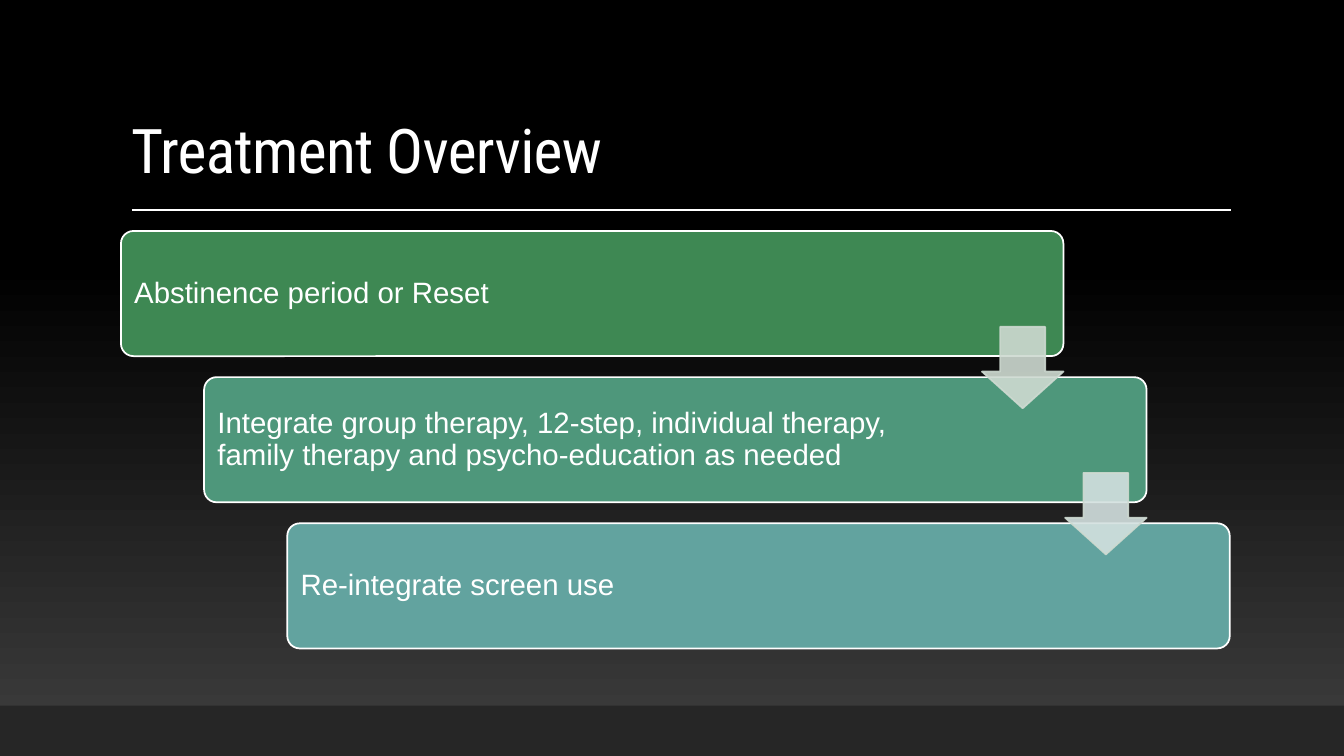
import pptx
import pptx.util
import pptx.dml.color
import pptx.enum.shapes
import pptx.enum.text
import pptx.oxml.ns
import lxml.etree

RGB = pptx.dml.color.RGBColor
KIND = pptx.enum.shapes.MSO_SHAPE
ANCHOR = pptx.enum.text.MSO_ANCHOR

WHITE = RGB(0xFF, 0xFF, 0xFF)
BLACK = RGB(0x00, 0x00, 0x00)
GREY = RGB(0x3F, 0x3F, 0x3F)
DARK = RGB(0x26, 0x26, 0x26)
GREEN = RGB(0x3E, 0x88, 0x53)
JADE = RGB(0x4E, 0x97, 0x7B)
TEAL = RGB(0x62, 0xA3, 0x9F)
PALE = RGB(0xCE, 0xDA, 0xD1)
MIST = RGB(0xD3, 0xE0, 0xDF)

STEPS = [
    ("Abstinence period or Reset", GREEN, 9.61),
    ("Integrate group therapy, 12-step, individual therapy, "
     "family therapy and psycho-education as needed", JADE, 9.17),
    ("Re-integrate screen use", TEAL, 9.17),
]
ARROWS = [PALE, MIST]
LEFT, TOP = 1.44, 2.75
RIGHT, DOWN = 0.99, 1.74


class Deck:
    """Draws styled elements on one slide laid out in 16 columns and 9 rows."""

    def __init__(self):
        self.prs = pptx.Presentation()
        self.prs.slide_width = pptx.util.Inches(13.33)
        self.prs.slide_height = pptx.util.Inches(7.5)
        self.slide = self.prs.slides.add_slide(self.prs.slide_layouts[5])
        self.shapes = self.slide.shapes

    def grid(self, col, row):
        return (int(self.prs.slide_width * col / 16),
                int(self.prs.slide_height * row / 9))

    def frame(self, col, row, wide, high):
        return self.grid(col, row) + self.grid(wide, high)

    def back(self, low, high):
        fill = self.slide.background.fill
        fill.gradient()
        fill.gradient_angle = 90
        for stop, color, place in zip(fill.gradient_stops, (low, high), (0, 0.65)):
            stop.color.rgb = color
            stop.position = place

    def letter(self, shape, text, size, face, anchor):
        body = shape.text_frame
        body.word_wrap = True
        body.auto_size = pptx.enum.text.MSO_AUTO_SIZE.NONE
        body.vertical_anchor = anchor
        para = body.paragraphs[0]
        para.text = text
        para.alignment = pptx.enum.text.PP_ALIGN.LEFT
        para.line_spacing = 0.9
        para.font.size = pptx.util.Pt(size)
        para.font.name = face
        para.font.color.rgb = WHITE
        return body

    def title(self, text, *area):
        shape = self.shapes.title
        shape.left, shape.top, shape.width, shape.height = self.frame(*area)
        body = self.letter(shape, text, 44, "Roboto Condensed", ANCHOR.BOTTOM)
        body.paragraphs[0].runs[0]._r.get_or_add_rPr().set("spc", "-50")

    def label(self, text, *area):
        shape = self.shapes.add_textbox(*self.frame(*area))
        body = self.letter(shape, text, 21, "Arial", ANCHOR.MIDDLE)
        edge = pptx.util.Inches(0.09)
        body.margin_left = body.margin_right = edge
        body.margin_top = body.margin_bottom = edge

    def rule(self, start, end, row):
        line = self.shapes.add_connector(
            pptx.enum.shapes.MSO_CONNECTOR.STRAIGHT,
            *self.grid(start, row), *self.grid(end, row))
        line.line.color.rgb = WHITE
        line.line.width = pptx.util.Pt(1)
        props = line._element.spPr
        lxml.etree.SubElement(props, pptx.oxml.ns.qn("a:effectLst"))

    def block(self, kind, area, color, edge=None, adjust=()):
        shape = self.shapes.add_shape(kind, *self.frame(*area))
        shape.shadow.inherit = False
        for place, value in enumerate(adjust):
            shape.adjustments[place] = value
        shape.fill.solid()
        shape.fill.fore_color.rgb = color
        if edge is None:
            shape.line.fill.background()
        else:
            shape.line.color.rgb = edge
            shape.line.width = pptx.util.Pt(1.25)
        return shape

    def arrow(self, color, *area):
        shape = self.block(KIND.DOWN_ARROW, area, color, PALE, (0.55, 0.45))
        tag = pptx.oxml.ns.qn
        for tint in shape._element.spPr.iter(tag("a:srgbClr")):
            lxml.etree.SubElement(tint, tag("a:alpha")).set("val", "90000")


def main():
    deck = Deck()
    deck.back(GREY, BLACK)
    deck.title("Treatment Overview", 1.44, 0.37, 13.2, 1.91)
    deck.rule(1.57, 14.65, 2.5)
    deck.block(KIND.RECTANGLE, (0, 8.4, 16, 0.6), DARK)
    for index, (text, color, wide) in enumerate(STEPS):
        col, row = LEFT + index * RIGHT, TOP + index * DOWN
        deck.block(KIND.ROUNDED_RECTANGLE, (col, row, 11.22, 1.49),
                   color, WHITE, (0.1,))
        deck.label(text, col + 0.05, row + 0.05, wide, 1.4)
    for index, color in enumerate(ARROWS):
        deck.arrow(color, LEFT + 10.25 + index * RIGHT,
                   TOP + 1.14 + index * DOWN, 0.97, 0.97)
    deck.prs.save("out.pptx")


if __name__ == "__main__":
    main()
